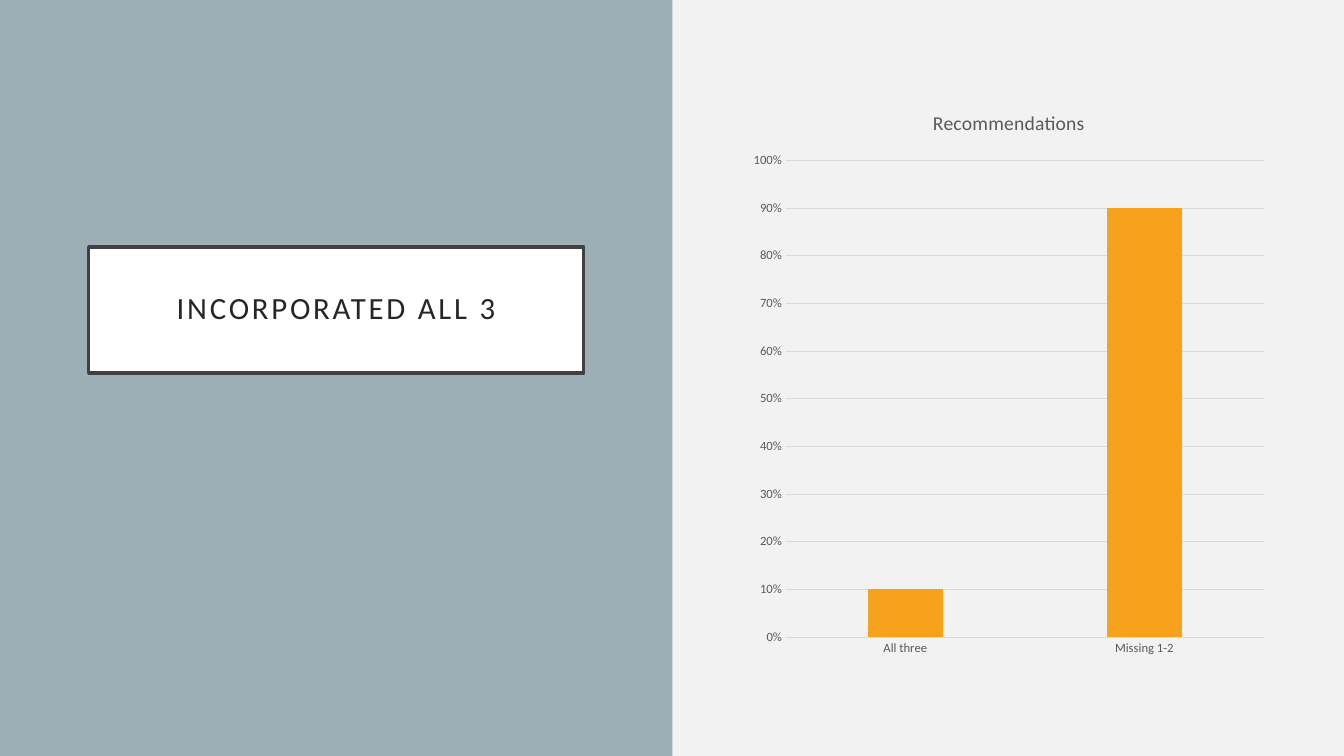
from dataclasses import dataclass

from pptx import Presentation
from pptx.chart.data import CategoryChartData
from pptx.dml.color import RGBColor
from pptx.enum.chart import XL_CHART_TYPE, XL_TICK_MARK
from pptx.enum.shapes import MSO_SHAPE
from pptx.enum.text import MSO_ANCHOR, MSO_AUTO_SIZE, PP_ALIGN
from pptx.util import Inches, Pt

COLUMNS = XL_CHART_TYPE.COLUMN_CLUSTERED
NO_TICK = XL_TICK_MARK.NONE
RECT = MSO_SHAPE.RECTANGLE
MIDDLE = MSO_ANCHOR.MIDDLE
CENTER = PP_ALIGN.CENTER
NO_AUTOFIT = MSO_AUTO_SIZE.NONE
TITLE_ONLY = 5


@dataclass(frozen=True)
class Theme:
    font: str = "Calibri"
    background: str = "F2F2F2"
    panel: str = "9BAFB5"
    box: str = "FFFFFF"
    frame: str = "404040"
    title: str = "262626"
    label: str = "595959"
    grid: str = "D9D9D9"
    bar: str = "F6A21D"
    title_size: float = 22
    chart_title_size: float = 14
    chart_size: float = 10
    axis_size: float = 9
    frame_width: float = 2.5
    grid_width: float = 0.75


THEME = Theme()


def rgb(color):
    return RGBColor.from_string(color)


def set_fill(fill, color):
    fill.solid()
    fill.fore_color.rgb = rgb(color)


def set_line(line, color, width):
    line.color.rgb = rgb(color)
    line.width = Pt(width)


def set_font(font, size, color):
    font.name = THEME.font
    font.size = Pt(size)
    font.bold = False
    font.color.rgb = rgb(color)


def add_panel(s, left, top, width, height):
    panel = s.shapes.add_shape(RECT, left, top, width, height)
    panel.shadow.inherit = False
    set_fill(panel.fill, THEME.panel)
    panel.line.fill.background()
    # Keep the panel behind the title
    s.shapes.element.insert(2, panel.element)


def set_title(s, text, left, top, width, height):
    title = s.shapes.title
    title.left, title.top, title.width, title.height = left, top, width, height
    set_fill(title.fill, THEME.box)
    set_line(title.line, THEME.frame, THEME.frame_width)

    tf = title.text_frame
    tf.word_wrap = True
    tf.auto_size = NO_AUTOFIT
    tf.vertical_anchor = MIDDLE
    tf.margin_left = tf.margin_right = Inches(0.2)
    tf.margin_top = tf.margin_bottom = Inches(0.2)

    p = tf.paragraphs[0]
    p.alignment = CENTER
    p.line_spacing = 0.9
    r = p.add_run()
    r.text = text
    set_font(r.font, THEME.title_size, THEME.title)
    # Letter spacing in hundredths of a point
    r.font._element.set("spc", "200")


def format_axis(axis):
    axis.major_tick_mark = axis.minor_tick_mark = NO_TICK
    set_font(axis.tick_labels.font, THEME.axis_size, THEME.label)


def add_column_chart(s, title, categories, values, left, top, width, height):
    data = CategoryChartData(number_format="0%")
    data.categories = categories
    data.add_series("Series 1", values)
    chart = s.shapes.add_chart(COLUMNS, left, top, width, height, data).chart
    set_font(chart.font, THEME.chart_size, THEME.label)
    chart.has_legend = False

    # Chart title
    chart.has_title = True
    r = chart.chart_title.text_frame.paragraphs[0].add_run()
    r.text = title
    set_font(r.font, THEME.chart_title_size, THEME.label)
    chart.chart_title.include_in_layout = False

    # Columns
    plot = chart.plots[0]
    plot.vary_by_categories = False
    plot.gap_width = 219
    plot.overlap = -27
    series = plot.series[0]
    set_fill(series.format.fill, THEME.bar)
    series.invert_if_negative = False

    # Axes and gridlines
    category_axis, value_axis = chart.category_axis, chart.value_axis
    format_axis(category_axis)
    format_axis(value_axis)
    set_line(category_axis.format.line, THEME.grid, THEME.grid_width)
    value_axis.format.line.fill.background()
    value_axis.has_major_gridlines = True
    set_line(value_axis.major_gridlines.format.line, THEME.grid, THEME.grid_width)
    value_axis.minimum_scale, value_axis.maximum_scale = 0, 1
    value_axis.major_unit = 0.1
    value_axis.tick_labels.number_format = "0%"
    value_axis.tick_labels.number_format_is_linked = False


def main():
    prs = Presentation()
    prs.slide_width, prs.slide_height = Inches(13.33), Inches(7.5)
    s = prs.slides.add_slide(prs.slide_layouts[TITLE_ONLY])
    set_fill(s.background.fill, THEME.background)

    # Left half: panel with the framed title
    add_panel(s, 0, 0, Inches(6.67), prs.slide_height)
    set_title(s, "INCORPORATED ALL 3",
              Inches(0.88), Inches(2.45), Inches(4.91), Inches(1.25))

    # Right half: chart
    add_column_chart(s, "Recommendations", ["All three", "Missing 1-2"], [0.1, 0.9],
                     Inches(7.37), Inches(0.88), Inches(5.27), Inches(5.74))

    prs.save("out.pptx")


if __name__ == "__main__":
    main()
